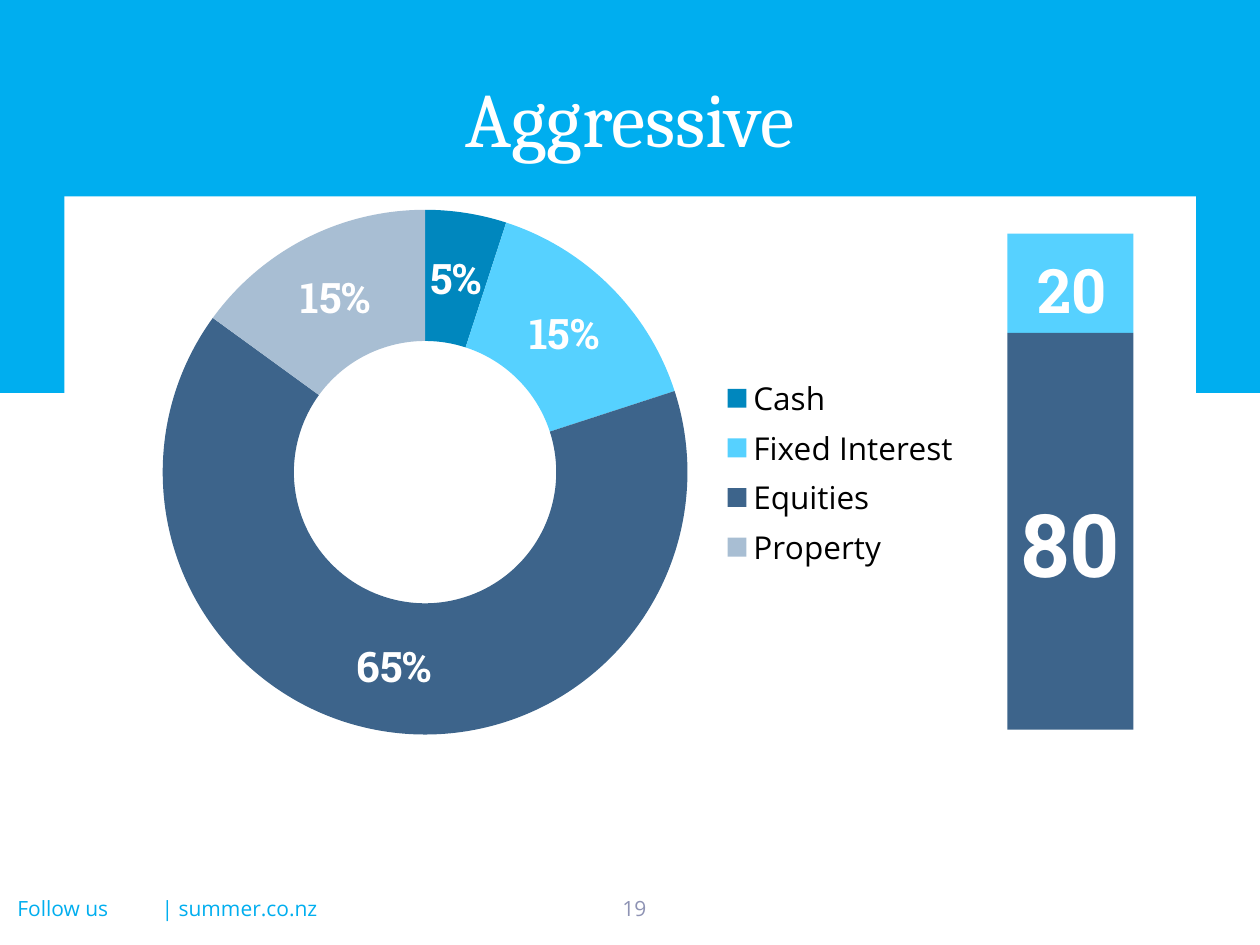
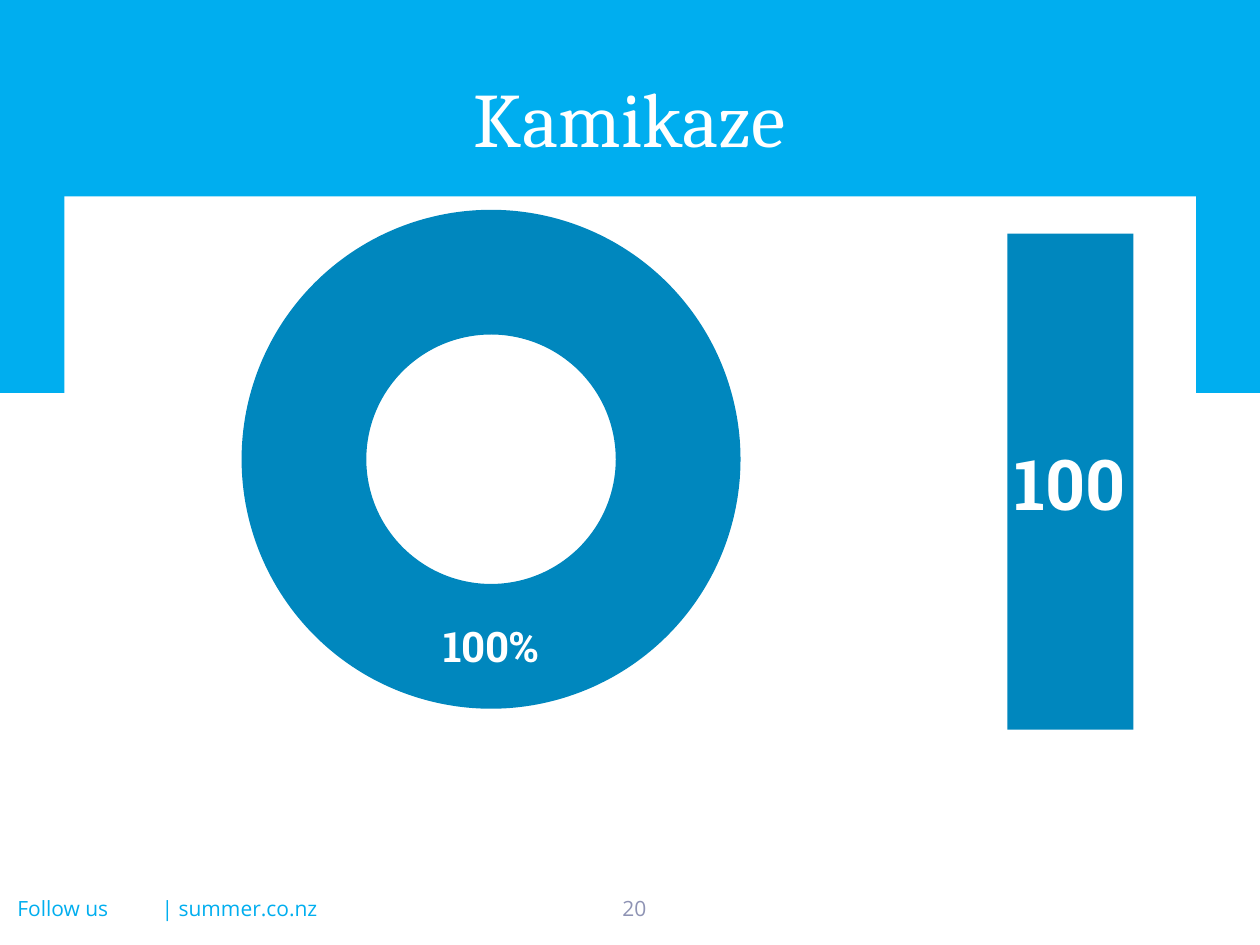
from dataclasses import dataclass
from lxml import etree
from pptx import Presentation
from pptx.chart.data import CategoryChartData
from pptx.dml.color import RGBColor
from pptx.enum.chart import XL_CHART_TYPE, XL_LEGEND_POSITION
from pptx.enum.shapes import MSO_SHAPE
from pptx.enum.text import MSO_ANCHOR, PP_ALIGN
from pptx.oxml.ns import qn
from pptx.util import Cm, Pt

RECT = MSO_SHAPE.RECTANGLE
DOUGHNUT = XL_CHART_TYPE.DOUGHNUT
LEGEND_RIGHT = XL_LEGEND_POSITION.RIGHT
TOP, MIDDLE = MSO_ANCHOR.TOP, MSO_ANCHOR.MIDDLE
LEFT, CENTER = PP_ALIGN.LEFT, PP_ALIGN.CENTER

WHITE = RGBColor(0xFF, 0xFF, 0xFF)
BLACK = RGBColor(0x00, 0x00, 0x00)
SKY = RGBColor(0x00, 0xAE, 0xEF)
NAVY = RGBColor(0x25, 0x40, 0x8F)
PAGE_GREY = RGBColor(0x8E, 0x93, 0xB4)
CASH = RGBColor(0x00, 0x87, 0xBE)
FIXED = RGBColor(0x56, 0xD1, 0xFF)
EQUITY = RGBColor(0x3D, 0x64, 0x8B)
PROPERTY = RGBColor(0xA8, 0xBE, 0xD3)

TITLE_FONT, BODY_FONT, NUMBER_FONT = "Cambria", "Open Sans", "Roboto Slab"

# Stacked bar: 100 points fill the full height
BAR_LEFT, BAR_TOP, BAR_WIDTH, BAR_HEIGHT = 20.31, 4.71, 2.54, 10.0


@dataclass(frozen=True)
class Box:
    """Position and size in centimetres."""
    left: float
    top: float
    width: float
    height: float

    def emu(self) -> tuple:
        return Cm(self.left), Cm(self.top), Cm(self.width), Cm(self.height)


@dataclass(frozen=True)
class TextStyle:
    font: str
    size: int
    color: RGBColor
    bold: bool = False
    align: PP_ALIGN = CENTER
    anchor: MSO_ANCHOR = MIDDLE


@dataclass(frozen=True)
class Slice:
    name: str
    value: int
    color: RGBColor


@dataclass(frozen=True)
class Segment:
    value: int
    color: RGBColor
    label_box: Box
    label_size: int


@dataclass(frozen=True)
class Portfolio:
    title: str
    page: int
    chart_box: Box
    ring_box: Box
    slices: tuple
    segments: tuple
    legend: bool


TITLE = TextStyle(TITLE_FONT, 44, WHITE)
FOOTER = TextStyle(BODY_FONT, 12, SKY, align=LEFT, anchor=TOP)
PAGE = TextStyle(BODY_FONT, 12, PAGE_GREY, anchor=TOP)

BANDS = ((Box(0, 0, 25.45, 7.92), SKY), (Box(1.3, 3.96, 22.81, 10.36), WHITE))
FOOTERS = (("Follow us", Box(0.1, 17.93, 2.44, 0.79)),
           (" | summer.co.nz", Box(2.9, 17.93, 3.81, 0.79)))

PORTFOLIOS = (
    Portfolio(
        "Aggressive", 19, Box(2.69, 3.89, 16.94, 11.28),
        Box(3.28, 4.23, 10.58, 10.58),
        (Slice("Cash", 5, CASH), Slice("Fixed Interest", 15, FIXED),
         Slice("Equities", 65, EQUITY), Slice("Property", 15, PROPERTY)),
        (Segment(20, FIXED, Box(20.5, 4.32, 2.21, 3), 35),
         Segment(80, EQUITY, Box(17.58, 9.65, 8, 2.59), 50)),
        legend=True),
    Portfolio(
        "Kamikaze", 20, Box(1.3, 3.89, 17.2, 11.28),
        Box(4.87, 4.23, 10.06, 10.06),
        (Slice("1", 100, CASH),),
        (Segment(100, CASH, Box(19.76, 4.72, 3.61, 10), 40),),
        legend=False),
)


def style_font(font, name: str, size: int, color: RGBColor, bold: bool = False) -> None:
    font.name, font.size, font.bold = name, Pt(size), bold
    font.color.rgb = color


def add_text(s, text: str, box: Box, style: TextStyle) -> None:
    tf = s.shapes.add_textbox(*box.emu()).text_frame
    tf.word_wrap = True
    tf.vertical_anchor = style.anchor
    p = tf.paragraphs[0]
    p.text = text
    p.alignment = style.align
    style_font(p.runs[0].font, style.font, style.size, style.color, style.bold)


def add_rect(s, box: Box, color: RGBColor) -> None:
    sp = s.shapes.add_shape(RECT, *box.emu())
    sp.shadow.inherit = False
    sp.fill.solid()
    sp.fill.fore_color.rgb = color
    sp.line.fill.background()


def place_ring(chart, frame: Box, ring: Box) -> None:
    """Fix the plot area at the ring's place within the chart frame."""
    plot_area = chart.plots[0]._element.getparent()
    for old in plot_area.findall(qn("c:layout")):
        plot_area.remove(old)
    layout = etree.Element(qn("c:layout"))
    manual = etree.SubElement(layout, qn("c:manualLayout"))
    settings = {
        "layoutTarget": "inner", "xMode": "edge", "yMode": "edge",
        "x": (ring.left - frame.left) / frame.width,
        "y": (ring.top - frame.top) / frame.height,
        "w": ring.width / frame.width,
        "h": ring.height / frame.height,
    }
    for tag, value in settings.items():
        etree.SubElement(manual, qn(f"c:{tag}")).set("val", str(value))
    plot_area.insert(0, layout)


def add_doughnut(s, item: Portfolio) -> None:
    data = CategoryChartData()
    data.categories = [part.name for part in item.slices]
    data.add_series("Series 1", [part.value for part in item.slices])
    chart = s.shapes.add_chart(DOUGHNUT, *item.chart_box.emu(), data).chart
    style_font(chart.font, BODY_FONT, 18, NAVY)
    chart.has_title = False
    chart.has_legend = item.legend
    if item.legend:
        chart.legend.position = LEGEND_RIGHT
        chart.legend.include_in_layout = False
        style_font(chart.legend.font, BODY_FONT, 18, BLACK)

    plot = chart.plots[0]
    plot.vary_by_categories = True
    for i, part in enumerate(item.slices):
        fill = plot.series[0].points[i].format.fill
        fill.solid()
        fill.fore_color.rgb = part.color
    plot.has_data_labels = True
    labels = plot.data_labels
    labels.show_percentage, labels.show_value = True, False
    labels.number_format, labels.number_format_is_linked = "0%", False
    style_font(labels.font, NUMBER_FONT, 24, WHITE, True)
    place_ring(chart, item.chart_box, item.ring_box)


def add_stacked_bar(s, segments: tuple) -> None:
    top = BAR_TOP
    for seg in segments:
        height = BAR_HEIGHT * seg.value / 100
        add_rect(s, Box(BAR_LEFT, top, BAR_WIDTH, height), seg.color)
        top += height
    for seg in segments:
        style = TextStyle(NUMBER_FONT, seg.label_size, WHITE, True)
        add_text(s, str(seg.value), seg.label_box, style)


def add_frame(s, title: str, page: int) -> None:
    add_text(s, str(page), Box(12.09, 17.93, 1.4, 0.76), PAGE)
    for box, color in BANDS:
        add_rect(s, box, color)
    for text, box in FOOTERS:
        add_text(s, text, box, FOOTER)
    add_text(s, title, Box(1.27, 0.76, 22.86, 3.18), TITLE)


def main() -> None:
    prs = Presentation()
    prs.slide_width, prs.slide_height = Cm(25.4), Cm(19.05)
    for item in PORTFOLIOS:
        s = prs.slides.add_slide(prs.slide_layouts[6])
        add_frame(s, item.title, item.page)
        add_doughnut(s, item)
        add_stacked_bar(s, item.segments)
    prs.save("out.pptx")


if __name__ == "__main__":
    main()
